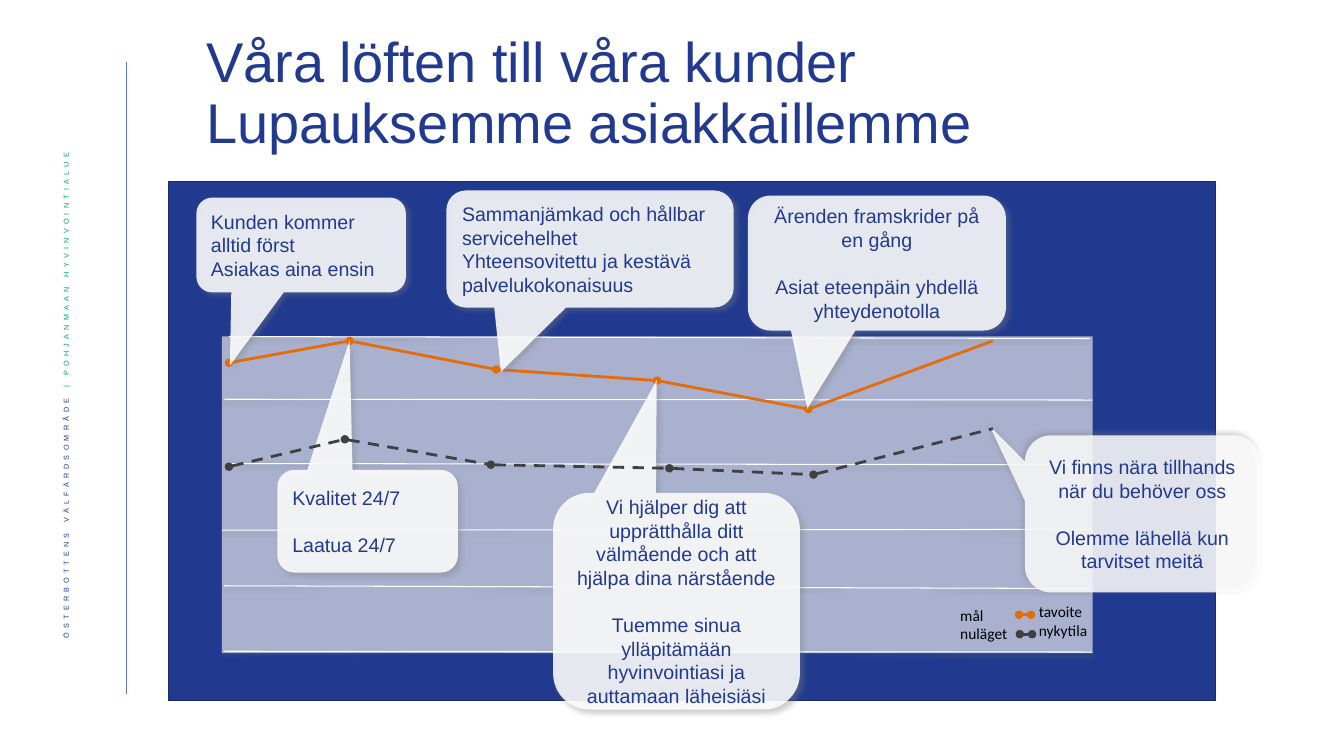
from itertools import pairwise
from pptx import Presentation
from pptx.dml.color import RGBColor
from pptx.enum.dml import MSO_LINE
from pptx.enum.shapes import MSO_CONNECTOR, MSO_SHAPE
from pptx.enum.text import MSO_ANCHOR, PP_ALIGN
from pptx.oxml import parse_xml
from pptx.oxml.ns import nsdecls
from pptx.util import Cm, Pt

NAVY = RGBColor(0x21, 0x3A, 0x8F)
EDGE = RGBColor(0x18, 0x2B, 0x6A)
BLUE = RGBColor(0x5C, 0x79, 0xD9)
GREEN = RGBColor(0x00, 0xA1, 0x74)
ORANGE = RGBColor(0xE4, 0x6C, 0x0A)
GREY = RGBColor(0x40, 0x40, 0x40)
PALE = RGBColor(0xF2, 0xF2, 0xF2)
WHITE = RGBColor(0xFF, 0xFF, 0xFF)
BLACK = RGBColor(0x00, 0x00, 0x00)

DASH = MSO_LINE.DASH
STRAIGHT = MSO_CONNECTOR.STRAIGHT
RECT = MSO_SHAPE.RECTANGLE
BUBBLE = MSO_SHAPE.ROUNDED_RECTANGULAR_CALLOUT
MIDDLE = MSO_ANCHOR.MIDDLE
LEFT, CENTER, RIGHT = PP_ALIGN.LEFT, PP_ALIGN.CENTER, PP_ALIGN.RIGHT

SHADOW = (
    '<a:outerShdw {ns} blurRad="{blur}" dist="{dist}" dir="{turn}" rotWithShape="0">'
    '<a:srgbClr val="808080"><a:alpha val="{alpha}"/></a:srgbClr></a:outerShdw>'
)

deck = Presentation()
deck.slide_width, deck.slide_height = Cm(33.87), Cm(19.05)
slide = deck.slides.add_slide(deck.slide_layouts[6])
shapes = slide.shapes


def graft(parent, xml, **parts):
    """Append an XML element to parent, filling in the parts of its template."""
    node = parse_xml(xml.format(ns=nsdecls("a"), **parts))
    parent.append(node)
    return node


def draw_line(ends, color, width, dash=None, dots=()):
    """Draw a straight line and return its effect list; dots names the round ends."""
    line = shapes.add_connector(STRAIGHT, *[Cm(n) for n in ends])
    line.line.color.rgb = color
    line.line.width = Pt(width)
    if dash:
        line.line.dash_style = dash
    for dot in dots:
        graft(line.line._get_or_add_ln(), '<a:{dot} {ns} type="oval"/>', dot=dot)
    return graft(line._element.spPr, "<a:effectLst {ns}/>")


# Side strip
draw_line((3.18, 1.55, 3.18, 17.48), BLUE, 0.5)
strip = shapes.add_textbox(Cm(1.07), Cm(3.61), Cm(1.32), Cm(14.55)).text_frame
strip.word_wrap = True
strip.vertical_anchor = MIDDLE
strip._txBody.bodyPr.set("vert", "vert270")
para = strip.paragraphs[0]
para.alignment = RIGHT
para.line_spacing = 0.9
para.font.size, para.font.name = Pt(9), "Arial"
for words, color in (("ÖSTERBOTTENS VÄLFÄRDSOMRÅDE ", NAVY),
                     ("| POHJANMAAN HYVINVOINTIALUE", GREEN)):
    run = para.add_run()
    run.text = words
    run.font.color.rgb = color
    run.font._element.set("baseline", "30000")
    run.font._element.set("spc", "300")

# Title and panels
board = shapes.add_shape(RECT, Cm(4.24), Cm(4.58), Cm(26.4), Cm(13.08))
board.shadow.inherit = False
board.fill.solid()
board.fill.fore_color.rgb = NAVY
board.line.color.rgb = EDGE
board.line.width = Pt(1)

title = shapes.add_textbox(Cm(4.95), Cm(1.14), Cm(25.35), Cm(2.51)).text_frame
title.word_wrap = True
title.vertical_anchor = MIDDLE
title.text = "Våra löften till våra kunder\vLupauksemme asiakkaillemme"
para = title.paragraphs[0]
para.line_spacing = 0.9
para.font.size, para.font.name = Pt(40), "Arial"
para.font.color.rgb = NAVY

plot = shapes.add_shape(RECT, Cm(5.59), Cm(8.48), Cm(21.95), Cm(7.98))
plot.shadow.inherit = False
plot.fill.solid()
plot.fill.fore_color.rgb = PALE
graft(plot._element.xpath("./p:spPr/a:solidFill/a:srgbClr")[0],
      '<a:alpha {ns} val="65000"/>')
plot.line.fill.background()

# Grid
for ends in (
    (5.77, 8.48, 27.46, 8.53),
    (5.64, 10.06, 27.53, 10.08),
    (5.77, 11.68, 27.53, 11.71),
    (5.59, 13.36, 27.51, 13.34),
    (5.64, 14.76, 27.46, 14.83),
    (5.64, 16.41, 27.53, 16.43),
):
    effects = draw_line(ends, WHITE, 0.75)
    graft(effects, SHADOW, blur=Pt(3.1), dist=Pt(1.6), turn=5400000, alpha=38000)

# Target line
target = [(5.77, 9.14), (8.81, 8.59), (12.5, 9.31),
          (16.56, 9.59), (20.37, 10.31), (25.02, 8.59)]
for start, end in pairwise(target):
    draw_line(start + end, ORANGE, 2, dots=["headEnd"])

# Legend
for left, top, width, names in ((25.93, 15.06, 2.18, "tavoite\nnykytila"),
                                (23.95, 15.14, 1.78, "mål\nnuläget")):
    label = shapes.add_textbox(Cm(left), Cm(top), Cm(width), Cm(1.19)).text_frame
    label.word_wrap = True
    label.text = names
    for para in label.paragraphs:
        para.font.size, para.font.name = Pt(11), "Calibri"
        para.font.color.rgb = BLACK
for ends, color, dash in (((25.68, 15.49, 25.98, 15.49), ORANGE, None),
                          ((25.7, 15.98, 26.01, 15.98), GREY, DASH)):
    draw_line(ends, color, 2, dash, ["headEnd", "tailEnd"])

# Promises: box, pointer, opacity, shadow angle, alignment, gap, text
promises = [
    ((4.95, 4.98, 5.28, 2.39), (-0.34, 1.27), 87, 45, LEFT, 0,
     "Kunden kommer alltid först\nAsiakas aina ensin"),
    ((11.25, 4.8, 7.24, 2.95), (-0.31, 1.05), 87, 45, LEFT, 0,
     "Sammanjämkad och hållbar servicehelhet\n"
     "Yhteensovitettu ja kestävä palvelukokonaisuus"),
    ((6.99, 11.84, 4.55, 2.59), (-0.1, -1.76), 87, 45, LEFT, 17,
     "Kvalitet 24/7\nLaatua 24/7"),
    ((13.94, 12.42, 6.22, 5.46), (-0.08, -1.02), 87, 45, CENTER, 17,
     "Vi hjälper dig att upprätthålla ditt välmående och att hjälpa dina närstående\n"
     "Tuemme sinua ylläpitämään hyvinvointiasi ja auttamaan läheisiäsi"),
    ((25.83, 10.97, 5.92, 3.96), (-0.65, -0.56), 84, 225, CENTER, 17,
     "Vi finns nära tillhands när du behöver oss\n"
     "Olemme lähellä kun tarvitset meitä"),
    ((18.85, 4.93, 6.5, 3.4), (-0.27, 1.08), 87, 45, CENTER, 17,
     "Ärenden framskrider på en gång\nAsiat eteenpäin yhdellä yhteydenotolla"),
]
for box, tip, solid, angle, align, gap, words in promises:
    bubble = shapes.add_shape(BUBBLE, *[Cm(n) for n in box])
    bubble.adjustments[0], bubble.adjustments[1] = tip
    bubble.fill.solid()
    bubble.fill.fore_color.rgb = WHITE
    graft(bubble._element.xpath("./p:spPr/a:solidFill/a:srgbClr")[0],
          '<a:alpha {ns} val="{val}"/>', val=solid * 1000)
    bubble.line.fill.background()
    bubble.shadow.inherit = False
    graft(bubble._element.xpath("./p:spPr/a:effectLst")[0], SHADOW,
          blur=Pt(4), dist=Pt(3), turn=angle * 60000, alpha=43000)
    frame = bubble.text_frame
    frame.word_wrap = True
    frame.vertical_anchor = MIDDLE
    frame.text = words
    for para in frame.paragraphs:
        para.alignment = align
        para.font.size, para.font.name = Pt(14), "Arial"
        para.font.color.rgb = NAVY
    frame.paragraphs[1].space_before = Pt(gap)

# Present line
present = [(5.77, 11.76), (8.69, 11.07), (12.37, 11.71),
           (16.87, 11.8), (20.5, 11.96), (25.02, 10.8)]
for start, end in pairwise(present):
    draw_line(start + end, GREY, 2, DASH, ["headEnd"])

deck.save("out.pptx")
